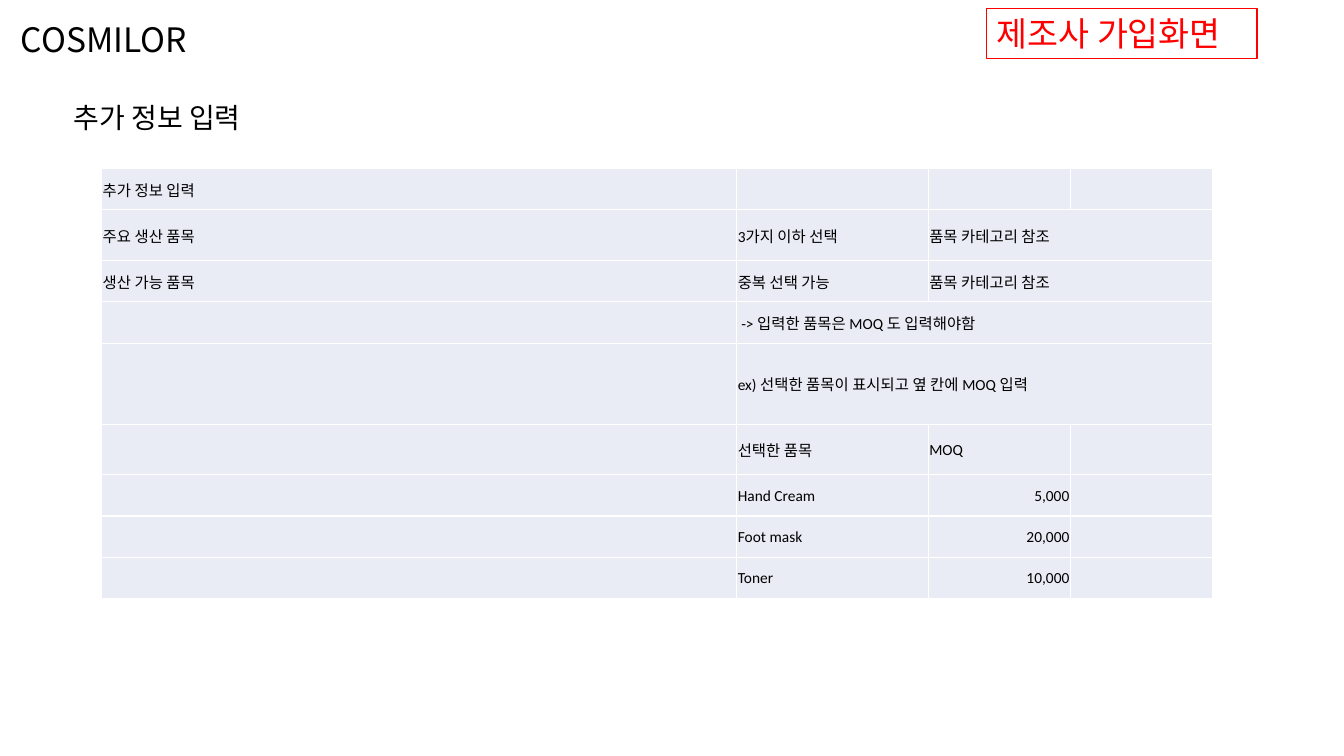
from lxml import etree
from pptx import Presentation
from pptx.dml.color import RGBColor
from pptx.enum import shapes, text
from pptx.oxml import ns
from pptx.util import Pt

COLORS = {"ink": "000000", "alert": "FF0000", "cell": "E9EBF5", "rule": "FFFFFF"}
HEADING_FONT = "Noto Sans CJK KR"
TABLE_FONT = "Calibri"

COLUMN_WIDTHS = [453.6, 136.8, 101.5, 101.5]
ROW_HEIGHT = 29.6
TALL_ROWS = {1: 36.2, 4: 57.8, 5: 36}
ROWS = [
    ["추가 정보 입력", "", "", ""],
    ["주요 생산 품목", "3가지 이하 선택", "품목 카테고리 참조", ""],
    ["생산 가능 품목", "중복 선택 가능", "품목 카테고리 참조", ""],
    ["", " -> 입력한 품목은 MOQ 도 입력해야함", "", ""],
    ["", "ex) 선택한 품목이 표시되고 옆 칸에 MOQ 입력", "", ""],
    ["", "선택한 품목", "MOQ", ""],
    ["", "Hand Cream", "5,000", ""],
    ["", "Foot mask", "20,000", ""],
    ["", "Toner", "10,000", ""],
]
# Row: first column of the merge that runs to the right edge
MERGES = {1: 2, 2: 2, 3: 1, 4: 1}


def rgb(name):
    return RGBColor.from_string(COLORS[name])


def write(frame, words, size, font, color="ink", align=text.PP_ALIGN.LEFT):
    paragraph = frame.paragraphs[0]
    paragraph.alignment = align
    run = paragraph.add_run()
    run.text = words
    run.font.size = Pt(size)
    run.font.name = font
    run.font.color.rgb = rgb(color)
    east_asian = etree.SubElement(run.font._element, ns.qn("a:ea"))
    east_asian.set("typeface", HEADING_FONT)


def add_heading(slide, words, left, top, width, height, size, color="ink", framed=False):
    box = (Pt(left), Pt(top), Pt(width), Pt(height))
    if framed:
        heading = slide.shapes.add_shape(shapes.MSO_SHAPE.RECTANGLE, *box)
        heading.shadow.inherit = False
        heading.fill.background()
        heading.line.color.rgb = rgb(color)
        heading.line.width = Pt(0.75)
    else:
        heading = slide.shapes.add_textbox(*box)
    frame = heading.text_frame
    frame.word_wrap = True
    frame.margin_right = 0
    frame.vertical_anchor = text.MSO_ANCHOR.MIDDLE
    write(frame, words, size, HEADING_FONT, color)


def add_borders(cell):
    properties = cell._tc.get_or_add_tcPr()
    for position, side in enumerate(("lnL", "lnR", "lnT", "lnB")):
        border = etree.Element(ns.qn(f"a:{side}"), w=str(Pt(1)))
        fill = etree.SubElement(border, ns.qn("a:solidFill"))
        etree.SubElement(fill, ns.qn("a:srgbClr"), val=COLORS["rule"])
        properties.insert(position, border)


def format_cell(cell):
    cell.fill.solid()
    cell.fill.fore_color.rgb = rgb("cell")
    cell.vertical_anchor = text.MSO_ANCHOR.MIDDLE
    cell.margin_left = cell.margin_right = cell.margin_top = Pt(0.7)
    cell.margin_bottom = 0
    add_borders(cell)


def add_input_table(slide, left, top):
    heights = [TALL_ROWS.get(row, ROW_HEIGHT) for row in range(len(ROWS))]
    table = slide.shapes.add_table(
        len(ROWS), len(COLUMN_WIDTHS), Pt(left), Pt(top),
        Pt(sum(COLUMN_WIDTHS)), Pt(sum(heights))).table
    table.first_row = table.horz_banding = False
    for column, width in zip(table.columns, COLUMN_WIDTHS):
        column.width = Pt(width)
    for row, height in zip(table.rows, heights):
        row.height = Pt(height)
    for row, start in MERGES.items():
        table.cell(row, start).merge(table.cell(row, len(COLUMN_WIDTHS) - 1))
    for row, entries in enumerate(ROWS):
        for column, words in enumerate(entries):
            cell = table.cell(row, column)
            format_cell(cell)
            if words:
                is_quantity = words.replace(",", "").isdigit()
                align = text.PP_ALIGN.RIGHT if is_quantity else text.PP_ALIGN.LEFT
                write(cell.text_frame, words, 11, TABLE_FONT, align=align)


def main():
    deck = Presentation()
    deck.slide_width, deck.slide_height = Pt(960), Pt(540)
    slide = deck.slides.add_slide(deck.slide_layouts[6])
    add_heading(slide, "COSMILOR", 7.9, 10.1, 130.3, 36, 24)
    add_heading(slide, "제조사 가입화면", 704.9, 5.8, 193, 36, 24, color="alert", framed=True)
    add_heading(slide, "추가 정보 입력", 45.4, 67.7, 149.8, 31.7, 20)
    add_input_table(slide, 72.7, 120.2)
    deck.save("out.pptx")


if __name__ == "__main__":
    main()
